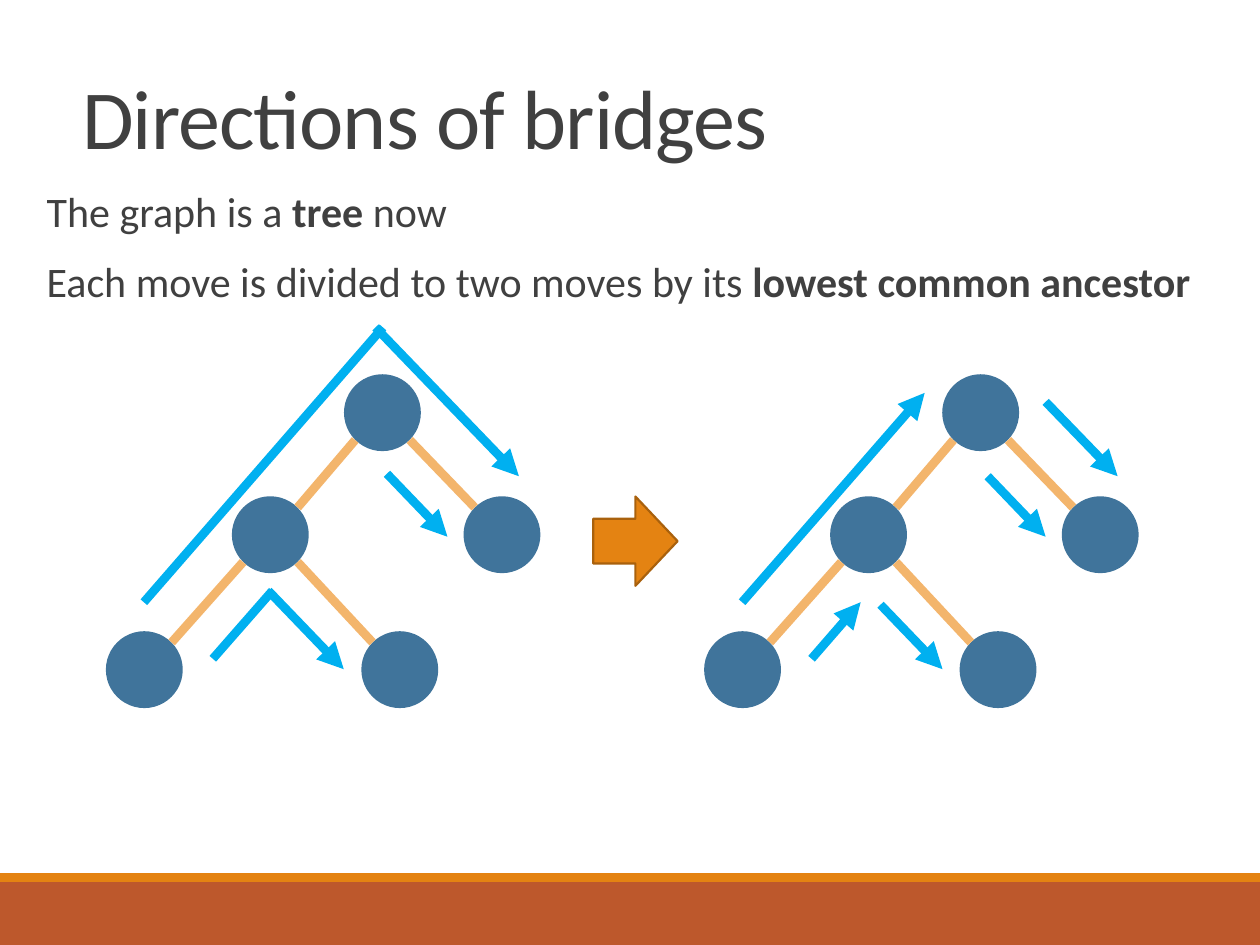
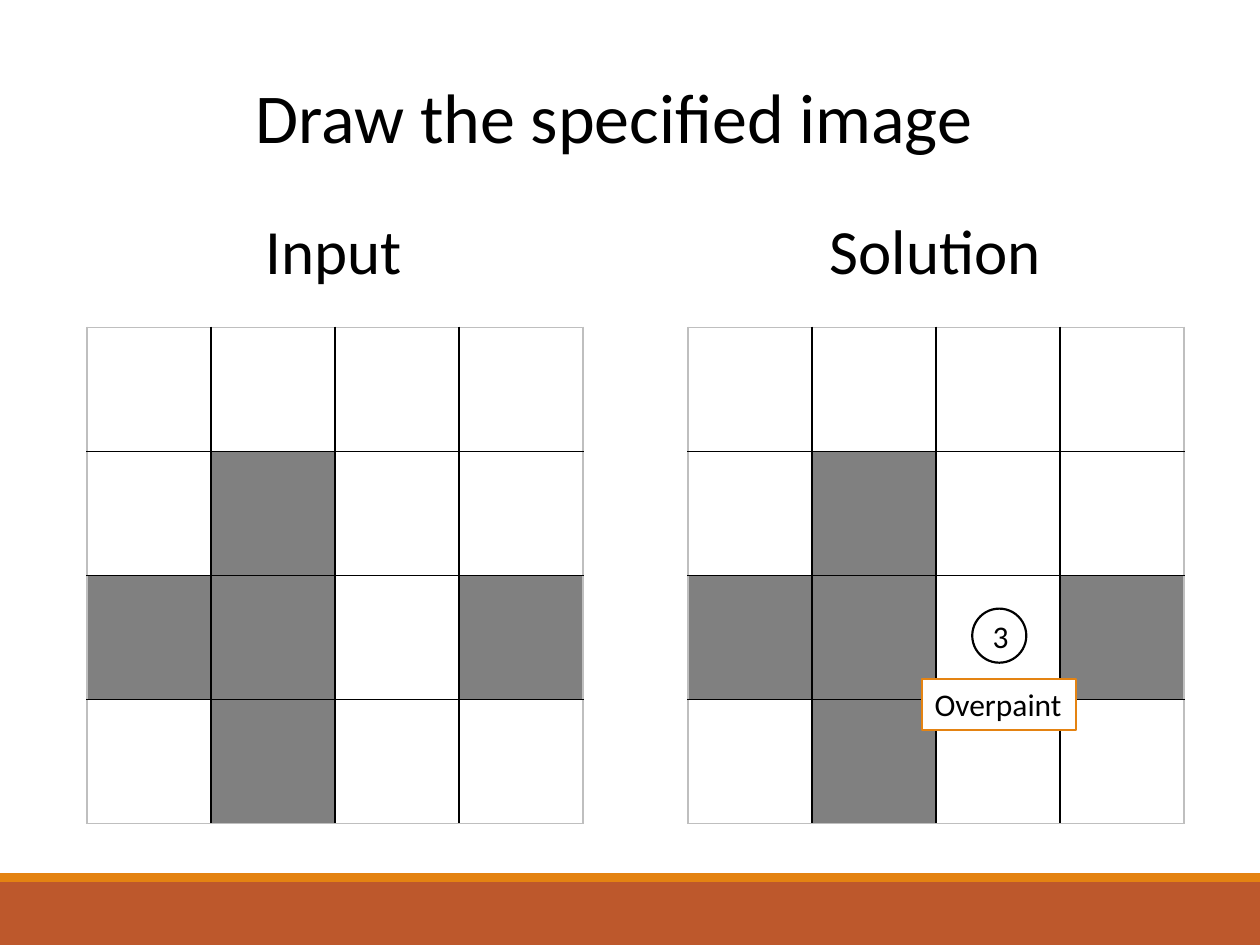
from lxml.etree import SubElement
from pptx import Presentation
from pptx.dml.color import RGBColor
from pptx.enum.shapes import MSO_CONNECTOR as CONN, MSO_SHAPE as SHAPE
from pptx.enum.text import MSO_ANCHOR as ANCHOR, PP_ALIGN as ALIGN
from pptx.oxml import parse_xml
from pptx.oxml.ns import nsdecls, qn
from pptx.util import Cm, Pt

rgb = RGBColor.from_string
FONT = "Calibri"
BLACK, WHITE, TEXT = "000000", "FFFFFF", "404040"
ORANGE, RUST, NODE = "E48312", "BD582C", "40749B"
EDGE, MOVE, PAINT, FRAME = "F3B56C", "00B0F0", "808080", "BFBFBF"


def format_text(tf, size, color, align=ALIGN.LEFT):
    for p in tf.paragraphs:
        p.alignment = align
        for r in p.runs:
            r.font.name = FONT
            r.font.size = Pt(size)
            r.font.color.rgb = rgb(color)


def add_line(s, start, end, color, arrow=False):
    c = s.shapes.add_connector(CONN.STRAIGHT, *map(Cm, start + end))
    c.line.color.rgb = rgb(color)
    c.line.width = Pt(5)
    if arrow:
        SubElement(c.line._get_or_add_ln(), qn("a:tailEnd"), type="triangle")
    SubElement(c.element.spPr, qn("a:effectLst"))


prs = Presentation()
prs.slide_width, prs.slide_height = Cm(25.4), Cm(19.05)

s = prs.slides.add_slide(prs.slide_layouts[1])
bands = [(17.78, 1.27, RUST), (17.6, 0.18, ORANGE)]
for i, (top, height, color) in enumerate(bands):
    sp = s.shapes.add_shape(SHAPE.RECTANGLE, 0, Cm(top), prs.slide_width, Cm(height))
    sp.shadow.inherit = False
    sp.fill.solid()
    sp.fill.fore_color.rgb = rgb(color)
    sp.line.fill.background()
    sp.element.nvSpPr.cNvPr.set("id", str(100 + i))
    prs.slide_master.shapes.element.insert(2 + i, sp.element)

title = s.shapes.title
title.left, title.top, title.width, title.height = Cm(1.4), Cm(0.79), Cm(22.71), Cm(2.69)
tf = title.text_frame
tf.text = "Directions of bridges"
tf.vertical_anchor = ANCHOR.BOTTOM
tf.paragraphs[0].line_spacing = 0.85
format_text(tf, 48, TEXT)
tf.paragraphs[0].runs[0].font._element.set("spc", "-50")

body = s.placeholders[1]
body.left, body.top, body.width, body.height = Cm(0.94), Cm(3.73), Cm(23.9), Cm(13.44)
tf = body.text_frame
tf.margin_left = tf.margin_right = 0
tf.text = "\n".join(["", ""])
sentences = [
    ["The graph is a ", "tree", " now"],
    ["Each move is divided to two moves by its ", "lowest common ancestor"],
]
for p, parts in zip(tf.paragraphs, sentences):
    p.line_spacing = 0.9
    p.space_before, p.space_after = Pt(12), Pt(2)
    pPr = p._p.get_or_add_pPr()
    pPr.set("marL", "0")
    pPr.set("indent", "0")
    SubElement(pPr, qn("a:buNone"))
    for i, part in enumerate(parts):
        r = p.add_run()
        r.text = part
        r.font.bold = i == 1
format_text(tf, 24, TEXT)

DIAMETER, CORNER, TREE_GAP = 1.55, 0.55, 12.06
nodes = {
    "root": (7.71, 8.32),
    "left": (5.45, 10.78),
    "right": (10.12, 10.78),
    "left_left": (2.91, 13.5),
    "left_right": (8.06, 13.5),
}
edges = [("root", "left"), ("root", "right"), ("left", "left_left"), ("left", "left_right")]
for shift in (0, TREE_GAP):
    for x, y in nodes.values():
        sp = s.shapes.add_shape(SHAPE.OVAL, Cm(x + shift - DIAMETER / 2), Cm(y - DIAMETER / 2),
                                Cm(DIAMETER), Cm(DIAMETER))
        sp.shadow.inherit = False
        sp.fill.solid()
        sp.fill.fore_color.rgb = rgb(NODE)
        sp.line.fill.background()
    for parent, child in edges:
        (x1, y1), (x2, y2) = nodes[parent], nodes[child]
        dx = CORNER if x2 > x1 else -CORNER
        add_line(s, (x1 + shift + dx, y1 + CORNER), (x2 + shift - dx, y2 - CORNER), EDGE)

moves = [
    ((7.8, 9.55), (9.02, 10.82), True),
    ((7.57, 6.6), (10.46, 9.6), True),
    ((7.72, 6.6), (2.9, 12.14), False),
    ((5.41, 11.91), (6.93, 13.49), True),
    ((5.49, 11.91), (4.29, 13.28), False),
    ((19.91, 9.6), (21.08, 10.82), True),
    ((21.08, 8.1), (22.53, 9.6), True),
    ((14.96, 12.14), (18.64, 7.92), True),
    ((17.75, 12.19), (19, 13.49), True),
    ((16.36, 13.28), (17.35, 12.14), True),
]
for start, end, arrow in moves:
    add_line(s, start, end, MOVE, arrow)

sp = s.shapes.add_shape(SHAPE.RIGHT_ARROW, Cm(11.96), Cm(10.01), Cm(1.7), Cm(1.8))
sp.shadow.inherit = False
sp.fill.solid()
sp.fill.fore_color.rgb = rgb(ORANGE)
sp.line.color.rgb = rgb("A9610D")
sp.line.width = Pt(1.25)

s = prs.slides.add_slide(prs.slide_layouts[5])
title = s.shapes.title
title.left, title.top, title.width, title.height = Cm(4.9), Cm(1.35), Cm(15.11), Cm(1.96)
tf = title.text_frame
tf.text = "Draw the specified image"
tf.word_wrap = False
tf.vertical_anchor = ANCHOR.TOP
format_text(tf, 40, BLACK)

CELL = 2.5
pattern = ["....", ".#..", "##.#", ".#.."]
size = len(pattern)
panels = [("Input", 5.11, 3.28, 1.75), ("Solution", 16.48, 4.83, 13.87)]
for label, label_left, label_width, grid_left in panels:
    tf = s.shapes.add_textbox(Cm(label_left), Cm(4.14), Cm(label_width), Cm(1.8)).text_frame
    tf.text = label
    tf.word_wrap = False
    format_text(tf, 36, BLACK)

    table = s.shapes.add_table(size, size, Cm(grid_left), Cm(6.6),
                               Cm(CELL * size), Cm(CELL * size)).table
    table.first_row = table.horz_banding = False
    for i in range(size):
        table.columns[i].width = table.rows[i].height = Cm(CELL)
    for row, marks in enumerate(pattern):
        for col, mark in enumerate(marks):
            cell = table.cell(row, col)
            cell.fill.solid()
            cell.fill.fore_color.rgb = rgb(PAINT if mark == "#" else WHITE)
            outer = [col == 0, col == size - 1, row == 0, row == size - 1]
            for i, (side, is_outer) in enumerate(zip("LRTB", outer)):
                cell._tc.get_or_add_tcPr().insert(i, parse_xml(
                    f'<a:ln{side} {nsdecls("a")} w="12700"><a:solidFill>'
                    f'<a:srgbClr val="{FRAME if is_outer else BLACK}"/>'
                    f'</a:solidFill></a:ln{side}>'))

step = s.shapes.add_shape(SHAPE.OVAL, Cm(19.6), Cm(12.27), Cm(1.09), Cm(1.09))
step.shadow.inherit = False
step.text_frame.text = "3"
format_text(step.text_frame, 18, BLACK, ALIGN.CENTER)
note = s.shapes.add_textbox(Cm(18.59), Cm(13.69), Cm(3.1), Cm(1.02))
note.text_frame.text = "Overpaint"
note.text_frame.word_wrap = False
format_text(note.text_frame, 18, BLACK)
for sp, color in ((step, BLACK), (note, ORANGE)):
    sp.fill.solid()
    sp.fill.fore_color.rgb = rgb(WHITE)
    sp.line.color.rgb = rgb(color)
    sp.line.width = Pt(1.25)

prs.save("out.pptx")
